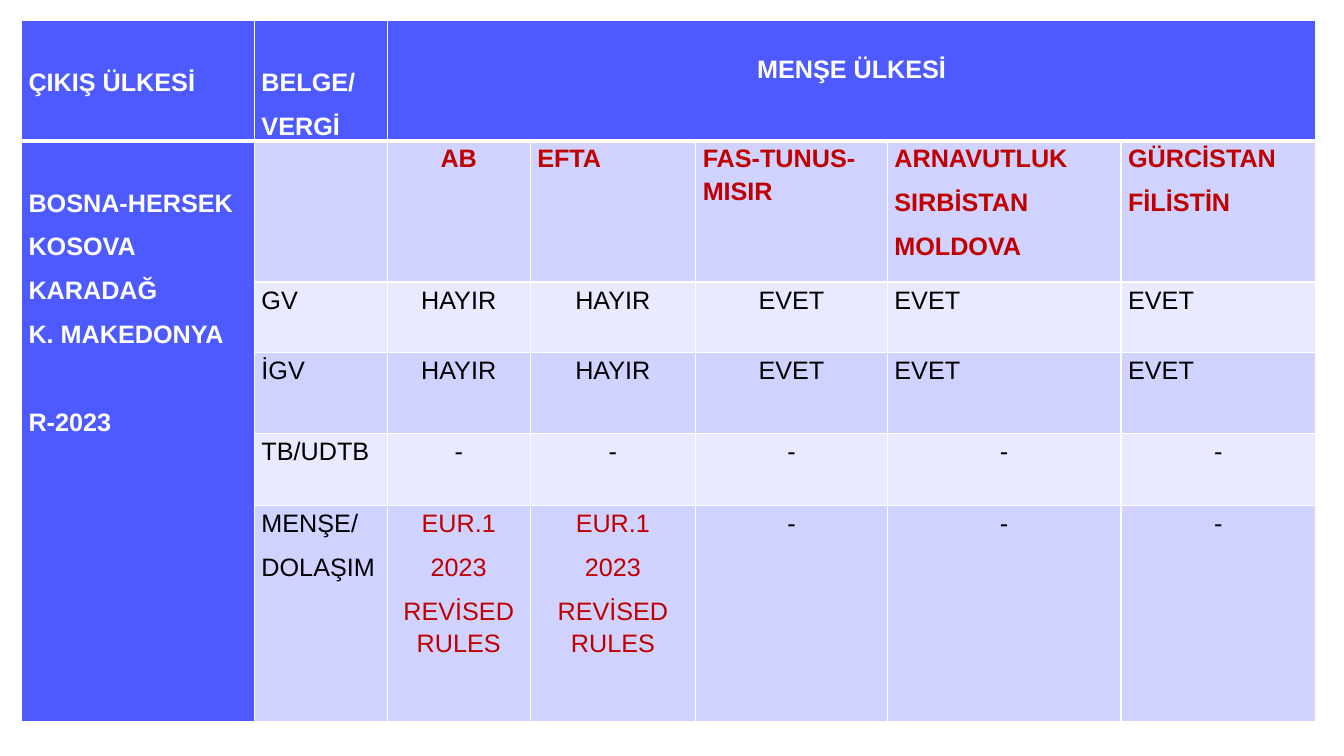
"""Build the slide with the origin cumulation table for exports from the Western Balkans."""
from dataclasses import dataclass

from lxml.etree import SubElement
from pptx import Presentation
from pptx.dml.color import RGBColor
from pptx.enum.text import PP_ALIGN
from pptx.oxml.ns import qn
from pptx.util import Cm, Pt


@dataclass(frozen=True)
class Theme:
    font: str = "Arial"
    size: int = 18
    line_spacing: float = 1.15
    space_after: int = 8
    group_gap: float = 39.8
    heading: str = "4D5AFF"
    dark_band: str = "D0D2FF"
    light_band: str = "E9EAFF"
    white: str = "FFFFFF"
    black: str = "000000"
    red: str = "C00000"
    thin: int = 1
    thick: int = 3


THEME = Theme()

HEADINGS = [("ÇIKIŞ ÜLKESİ", 1.12), ("BELGE/\nVERGİ", 1.12), ("MENŞE ÜLKESİ", 0.79)]
EXPORTERS = "BOSNA-HERSEK\nKOSOVA\nKARADAĞ\nK. MAKEDONYA\n\nR-2023"
ORIGINS = ["", "AB", "EFTA", "FAS-TUNUS-MISIR",
           "ARNAVUTLUK\nSIRBİSTAN\nMOLDOVA", "GÜRCİSTAN\nFİLİSTİN"]
CERTIFICATE = "EUR.1\n2023\nREVİSED RULES"
DUTIES = [
    ["GV", "HAYIR", "HAYIR", "EVET", "EVET", "EVET"],
    ["İGV", "HAYIR", "HAYIR", "EVET", "EVET", "EVET"],
    ["TB/UDTB", "-", "-", "-", "-", "-"],
    ["MENŞE/\nDOLAŞIM", CERTIFICATE, CERTIFICATE, "-", "-", "-"],
]
COLUMN_WIDTHS = [5.87, 3.35, 3.6, 4.17, 4.83, 5.89, 4.91]
ROW_HEIGHTS = [2.97, 3.56, 1.78, 2.03, 1.83, 5.44]


def write(cell, text, *, color, bold=False, centered=False, top=0.0):
    cell.margin_left = cell.margin_right = Cm(0.18)
    cell.margin_top, cell.margin_bottom = Cm(top), Cm(0)
    groups = [group.split("\n") for group in text.split("\n\n")]
    lines = [(line, THEME.group_gap if line is group[-1] and group is not groups[-1]
              else THEME.space_after) for group in groups for line in group]
    for index, (line, gap) in enumerate(lines):
        frame = cell.text_frame
        paragraph = frame.add_paragraph() if index else frame.paragraphs[0]
        paragraph.alignment = PP_ALIGN.CENTER if centered else PP_ALIGN.LEFT
        paragraph.line_spacing = THEME.line_spacing
        paragraph.space_after = Pt(gap)
        paragraph.font.size = Pt(THEME.size)
        if line:
            run = paragraph.add_run()
            run.text = line
            run.font.name = THEME.font
            run.font.size = Pt(THEME.size)
            run.font.bold = bold
            run.font.color.rgb = RGBColor.from_string(color)


def paint(cell, fill, top_width, bottom_width):
    properties = cell._tc.get_or_add_tcPr()
    sides = {"a:lnL": THEME.thin, "a:lnR": THEME.thin,
             "a:lnT": top_width, "a:lnB": bottom_width}
    for side, width in sides.items():
        border = SubElement(properties, qn(side), w=str(Pt(width)))
        SubElement(SubElement(border, qn("a:solidFill")), qn("a:srgbClr"), val=THEME.white)
    cell.fill.solid()
    cell.fill.fore_color.rgb = RGBColor.from_string(fill)


def band(row, column):
    if row == 0 or column == 0:
        return THEME.heading
    return THEME.dark_band if row % 2 else THEME.light_band


def fill_table(table):
    for column, width in zip(table.columns, COLUMN_WIDTHS):
        column.width = Cm(width)
    for row, height in zip(table.rows, ROW_HEIGHTS):
        row.height = Cm(height)
    for row in range(len(ROW_HEIGHTS)):
        for column in range(len(COLUMN_WIDTHS)):
            paint(table.cell(row, column), band(row, column),
                  THEME.thick if row == 1 else THEME.thin,
                  THEME.thick if row == 0 else THEME.thin)
    table.cell(0, 2).merge(table.cell(0, len(COLUMN_WIDTHS) - 1))
    table.cell(1, 0).merge(table.cell(len(ROW_HEIGHTS) - 1, 0))

    for column, (heading, top) in enumerate(HEADINGS):
        write(table.cell(0, column), heading, color=THEME.white, bold=True,
              centered=column == 2, top=top)
    write(table.cell(1, 0), EXPORTERS, color=THEME.white, bold=True, top=1.12)
    for row, entries in enumerate([ORIGINS, *DUTIES], start=1):
        for column, entry in enumerate(entries, start=1):
            is_origin = row == 1
            write(table.cell(row, column), entry,
                  color=THEME.red if is_origin or entry == CERTIFICATE else THEME.black,
                  bold=is_origin,
                  centered=entry == "-" or column == 2 or (column in (3, 4) and not is_origin))


def main():
    presentation = Presentation()
    presentation.slide_width, presentation.slide_height = Cm(33.87), Cm(19.05)
    slide = presentation.slides.add_slide(presentation.slide_layouts[6])
    frame = slide.shapes.add_table(len(ROW_HEIGHTS), len(COLUMN_WIDTHS), Cm(0.54), Cm(0.51),
                                   Cm(sum(COLUMN_WIDTHS)), Cm(sum(ROW_HEIGHTS)))
    fill_table(frame.table)
    presentation.save("out.pptx")


if __name__ == "__main__":
    main()
